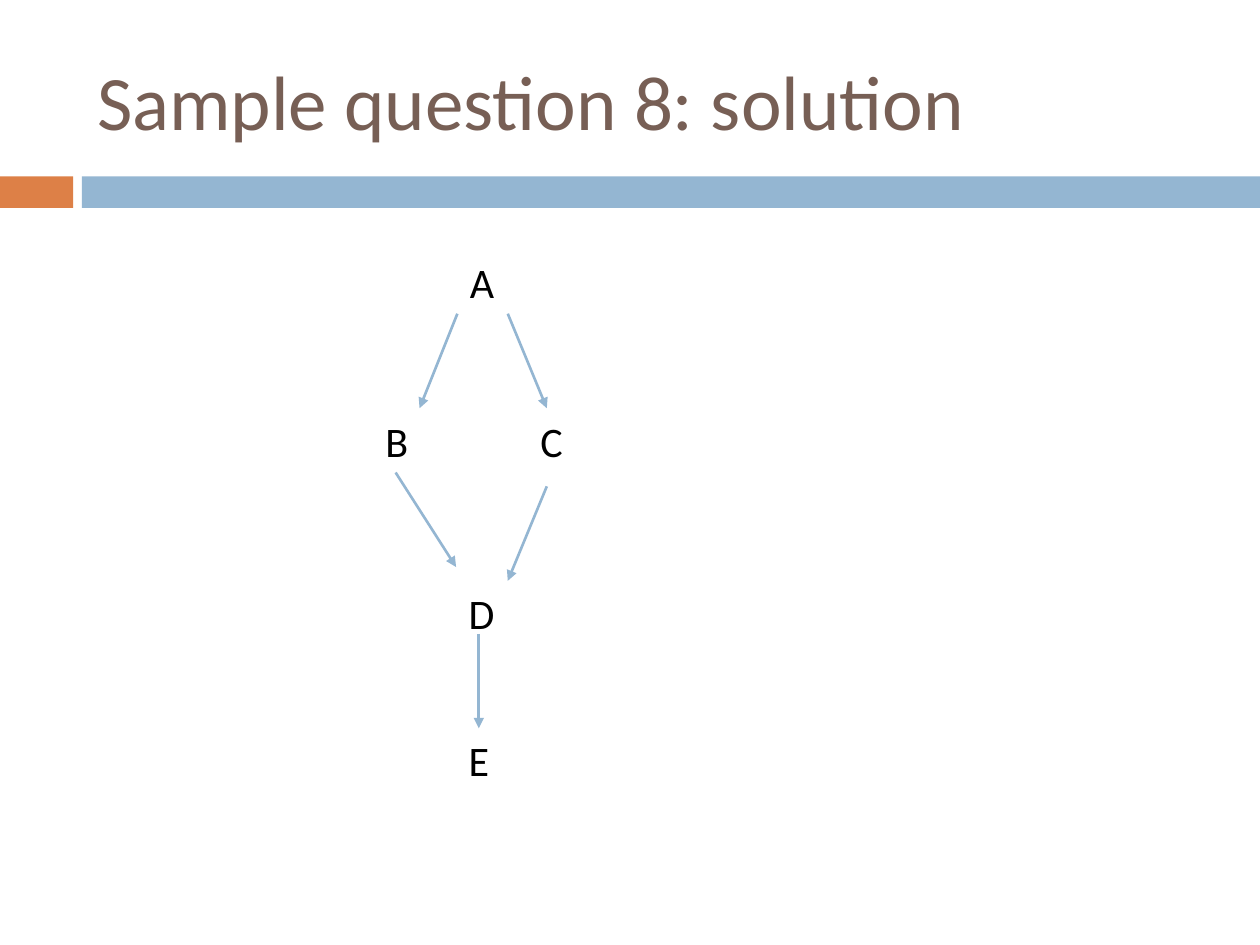
from lxml.etree import SubElement
from pptx import Presentation
from pptx.dml.color import RGBColor
from pptx.enum.shapes import MSO_CONNECTOR, MSO_SHAPE
from pptx.enum.text import MSO_ANCHOR, MSO_AUTO_SIZE, PP_ALIGN
from pptx.oxml.ns import qn
from pptx.util import Inches, Pt

ORANGE = RGBColor(0xDD, 0x80, 0x47)
BLUE = RGBColor(0x94, 0xB6, 0xD2)
BROWN = RGBColor(0x77, 0x5F, 0x55)
BLACK = RGBColor(0, 0, 0)
FONT = "Calibri"

TITLE = "Sample question 8: solution"
BANDS = [(0, 0.58, ORANGE), (0.65, 9.35, BLUE)]
BAND_TOP, BAND_HEIGHT = 1.4, 0.25
NODES = {  # name: left, top, width
    "A": (3.63, 1.99, 0.41),
    "B": (2.96, 3.25, 0.37),
    "C": (4.19, 3.25, 0.41),
    "D": (3.62, 4.61, 0.41),
    "E": (3.62, 5.78, 0.35),
}
NODE_HEIGHT = 0.5
EDGES = [(3.63, 2.49, -0.3), (4.03, 2.49, 0.31), (3.14, 3.75, 0.48),
         (4.34, 3.86, -0.31), (3.8, 5.03, 0)]
EDGE_DROP = 0.75


def add_run(tf, text, size, color):
    """Add one formatted run to the first paragraph."""
    r = tf.paragraphs[0].add_run()
    r.text = text
    r.font.name, r.font.size = FONT, Pt(size)
    r.font.color.rgb = color


def add_band(s, left, width, color):
    """Add a plain bar below the title."""
    sp = s.shapes.add_shape(MSO_SHAPE.RECTANGLE, Inches(left), Inches(BAND_TOP),
                            Inches(width), Inches(BAND_HEIGHT))
    sp.shadow.inherit = False
    sp.fill.solid()
    sp.fill.fore_color.rgb = color
    sp.line.fill.background()


def add_title(s):
    """Place and format the title."""
    sp = s.shapes.title
    sp.left, sp.top, sp.width, sp.height = map(Inches, (0.67, 0.25, 8.92, 1.08))
    tf = sp.text_frame
    tf.vertical_anchor = MSO_ANCHOR.MIDDLE
    tf.paragraphs[0].alignment = PP_ALIGN.LEFT
    add_run(tf, TITLE, 44, BROWN)


def add_node(s, name, left, top, width):
    """Add a lettered graph node."""
    sp = s.shapes.add_textbox(*map(Inches, (left, top, width, NODE_HEIGHT)))
    tf = sp.text_frame
    tf.word_wrap = False
    tf.auto_size = MSO_AUTO_SIZE.SHAPE_TO_FIT_TEXT
    add_run(tf, name, 24, BLACK)


def add_edge(s, x, y, dx):
    """Add an arrow from a point down to the next level."""
    sp = s.shapes.add_connector(MSO_CONNECTOR.STRAIGHT,
                                *map(Inches, (x, y, x + dx, y + EDGE_DROP)))
    sp.line.color.rgb = BLUE
    sp.line.width = Pt(1.5)
    SubElement(sp.line._get_or_add_ln(), qn("a:tailEnd"), type="triangle")
    SubElement(sp._element.spPr, qn("a:effectLst"))


def main():
    """Build the slide."""
    prs = Presentation()
    prs.slide_width, prs.slide_height = Inches(10), Inches(7.5)
    s = prs.slides.add_slide(prs.slide_layouts[5])
    for band in BANDS:
        add_band(s, *band)
    add_title(s)
    for name, place in NODES.items():
        add_node(s, name, *place)
    for edge in EDGES:
        add_edge(s, *edge)
    prs.save("out.pptx")


if __name__ == "__main__":
    main()
